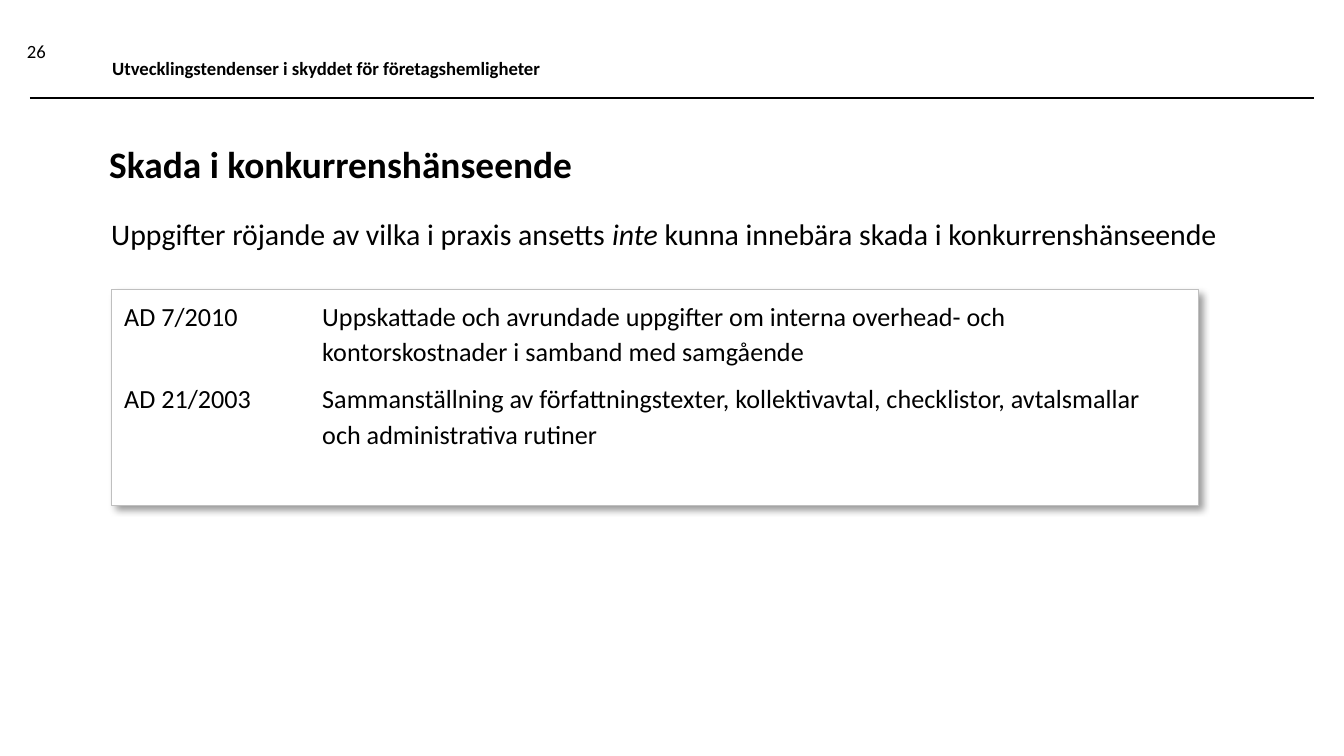
from lxml.etree import SubElement as Sub
from pptx import Presentation
from pptx.dml.color import RGBColor
from pptx.enum.shapes import MSO_CONNECTOR as Conn, MSO_SHAPE as Kind
from pptx.enum.text import MSO_ANCHOR as Anchor, PP_ALIGN as Align
from pptx.oxml.ns import qn
from pptx.util import Emu, Pt

SCALE = 914400 / 134.4
BLACK, WHITE, GREY = "000000", "FFFFFF", "BFBFBF"


def px(num):
    return Emu(round(num * SCALE))


def tint(code):
    return RGBColor.from_string(code)


def write(shape, paras, size=14, bold=False, anchor=Anchor.TOP, pad=None,
          hang=0, space=None, after=None):
    frame = shape.text_frame
    frame.word_wrap = True
    frame.vertical_anchor = anchor
    if pad is not None:
        frame.margin_left = frame.margin_right = px(pad)
        frame.margin_top = frame.margin_bottom = px(pad)
    for num, runs in enumerate(paras):
        para = frame.add_paragraph() if num else frame.paragraphs[0]
        para.alignment = Align.LEFT
        if hang:
            props = para._p.get_or_add_pPr()
            props.set("marL", str(px(hang)))
            props.set("indent", str(-px(hang)))
        if space:
            para.line_spacing = space
        if after:
            para.space_after = Pt(after)
        for text, slant in runs:
            run = para.add_run()
            run.text = text
            font = run.font
            font.name, font.size = "Calibri", Pt(size)
            font.bold, font.italic = bold, slant
            font.color.rgb = tint(BLACK)


class Deck:
    def __init__(self, wide, high):
        self.file = Presentation()
        self.file.slide_width, self.file.slide_height = px(wide), px(high)
        self.slide = self.file.slides.add_slide(self.file.slide_layouts[6])

    def rule(self, left, right, top):
        line = self.slide.shapes.add_connector(
            Conn.STRAIGHT, px(left), px(top), px(right), px(top))
        line.line.color.rgb = tint(BLACK)
        line.line.width = Pt(0.75)
        Sub(line._element.spPr, qn("a:effectLst"))

    def label(self, box, text, **style):
        shape = self.slide.shapes.add_textbox(*map(px, box))
        write(shape, [[(text, False)]], **style)

    def panel(self, box, paras, edge, width, fill=None, shade=False, **style):
        shape = self.slide.shapes.add_shape(Kind.RECTANGLE, *map(px, box))
        shape.shadow.inherit = False
        if fill:
            shape.fill.solid()
            shape.fill.fore_color.rgb = tint(fill)
        else:
            shape.fill.background()
        shape.line.color.rgb = tint(edge)
        shape.line.width = Pt(width)
        if shade:
            self.shade(shape)
        write(shape, paras, **style)

    def shade(self, shape):
        effects = shape._element.spPr.find(qn("a:effectLst"))
        outer = Sub(effects, qn("a:outerShdw"), blurRad=str(Pt(4)),
                    dist=str(Pt(3)), dir="2700000", algn="tl",
                    rotWithShape="0")
        color = Sub(outer, qn("a:srgbClr"), val=BLACK)
        Sub(color, qn("a:alpha"), val="40000")


def main():
    deck = Deck(1344, 756)
    deck.rule(30, 1314, 98)
    deck.label((96, 119, 1185, 89), "Skada i konkurrenshänseende",
               size=20, bold=True, anchor=Anchor.MIDDLE)
    deck.label((99, 53, 573, 31),
               "Utvecklingstendenser i skyddet för företagshemligheter",
               size=10, bold=True, anchor=Anchor.MIDDLE)
    deck.label((27, 40, 51, 25), "26", size=10, pad=0)
    lead = [("Uppgifter röjande av vilka i praxis ansetts ", False),
            ("inte", True),
            (" kunna innebära skada i konkurrenshänseende", False)]
    deck.panel((98, 209, 1167, 50), [lead], WHITE, 0.75, size=16)
    cases = [
        ("AD 7/2010", "Uppskattade och avrundade uppgifter om interna "
         "overhead- och kontorskostnader i samband med samgående"),
        ("AD 21/2003", "Sammanställning av författningstexter, "
         "kollektivavtal, checklistor, avtalsmallar och "
         "administrativa rutiner"),
    ]
    paras = [[(f"{case}\t{text}", False)] for case, text in cases]
    deck.panel((111, 289, 1087, 216), paras, GREY, 0.25, fill=WHITE,
               shade=True, hang=198, space=1.14, after=6)
    deck.file.save("out.pptx")


if __name__ == "__main__":
    main()
